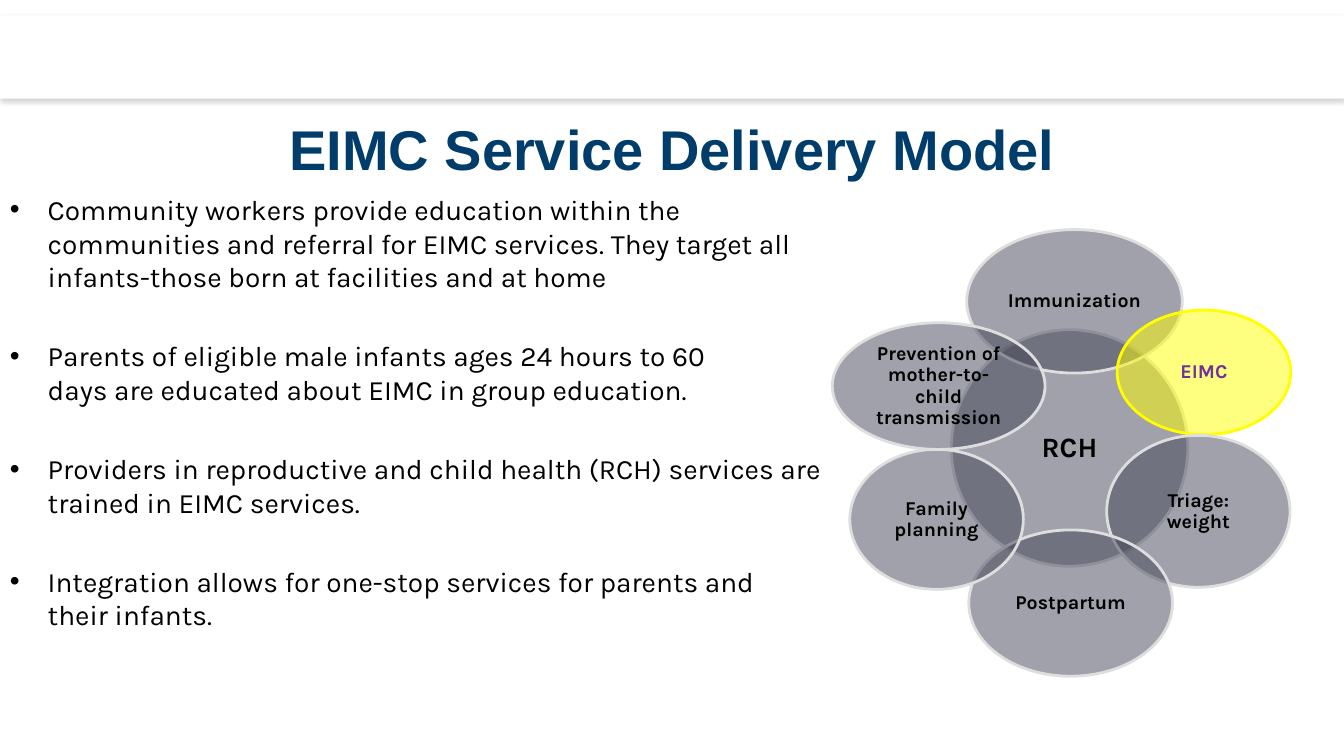
from lxml.etree import SubElement
from pptx import Presentation
from pptx.dml.color import RGBColor
from pptx.enum.shapes import MSO_SHAPE
from pptx.enum.text import MSO_ANCHOR, PP_ALIGN
from pptx.oxml.ns import qn
from pptx.util import Pt

TITLE = "EIMC Service Delivery Model"
BULLETS = [
    ["Community workers provide education within the communities and referral "
     "for EIMC services. They target all infants-those born at facilities and at home"],
    ["Parents of eligible male infants ages 24 hours to 60 ",
     "days are educated about EIMC in group education."],
    ["Providers in reproductive and child health (RCH) services are trained in EIMC services."],
    ["Integration allows for one-stop services for parents and their infants."],
]
GREY = ("424456", "DEDEDE", "000000")
YELLOW = ("FFFF00", "FFFF00", "7030A0")
SERVICES = [
    ("RCH", 679.5, 235.5, 169, 169, 20, GREY),
    ("Immunization", 690.5, 164, 154, 102.5, 14, GREY),
    ("EIMC", 798, 221.5, 124, 89, 14, YELLOW),
    ("Triage: weight", 790.5, 311, 131, 108.5, 14, GREY),
    ("Postpartum", 692, 378.5, 145.5, 104.5, 14, GREY),
    ("Family planning", 607, 321, 124, 100, 14, GREY),
    ("Prevention of mother-to-child transmission", 594.5, 230.5, 152, 90.5, 14, GREY),
]


def paint(color_format, value):
    color_format.rgb = RGBColor.from_string(value)


def add_run(p, text, font, size, color, bold=False):
    r = p.add_run()
    r.text = text
    r.font.name = font
    r.font.size = Pt(size)
    r.font.bold = bold
    paint(r.font.color, color)


def add_shape(kind, box, fill):
    s = slide.shapes.add_shape(kind, *map(Pt, box))
    s.shadow.inherit = False
    s.fill.solid()
    paint(s.fill.fore_color, fill)
    return s


def add_text_frame(box):
    tf = slide.shapes.add_textbox(*map(Pt, box)).text_frame
    tf.word_wrap = True
    return tf


def set_alpha(color, percent):
    SubElement(color, qn("a:alpha"), val=str(percent * 1000))


def add_bullet(p, indent):
    pPr = p._p.get_or_add_pPr()
    pPr.set("marL", str(Pt(indent)))
    pPr.set("indent", str(-Pt(indent)))
    SubElement(pPr, qn("a:buFont"), typeface="Arial")
    SubElement(pPr, qn("a:buChar"), char="•")


def add_banner():
    s = add_shape(MSO_SHAPE.RECTANGLE, (0, 11, 960, 59.5), "FFFFFF")
    s.line.fill.background()
    effects = s._element.spPr.find(qn("a:effectLst"))
    shadow = SubElement(effects, qn("a:outerShdw"), blurRad=str(Pt(3.1)),
                        dist=str(Pt(1.8)), dir="5400000", rotWithShape="0")
    set_alpha(SubElement(shadow, qn("a:srgbClr"), val="808080"), 35)


def add_title():
    tf = add_text_frame((48, 75, 864, 61))
    tf.vertical_anchor = MSO_ANCHOR.MIDDLE
    p = tf.paragraphs[0]
    p.alignment = PP_ALIGN.CENTER
    add_run(p, TITLE, "Arial", 40, "003D6B", True)


def add_bullets():
    tf = add_text_frame((0, 134, 594, 369))
    for i, lines in enumerate(BULLETS):
        p = tf.add_paragraph() if i else tf.paragraphs[0]
        add_bullet(p, 27)
        if i:
            p.space_before = Pt(32.5)
        for j, line in enumerate(lines):
            if j:
                p.add_line_break()
            add_run(p, line, "Karla", 20, "000000")


def add_service(name, left, top, width, height, size, colors):
    fill, outline, ink = colors
    s = add_shape(MSO_SHAPE.OVAL, (left, top, width, height), fill)
    set_alpha(s._element.spPr.find(qn("a:solidFill"))[0], 50)
    paint(s.line.color, outline)
    s.line.width = Pt(2)
    tf = s.text_frame
    tf.word_wrap = True
    tf.vertical_anchor = MSO_ANCHOR.MIDDLE
    tf.margin_left = tf.margin_right = tf.margin_top = tf.margin_bottom = Pt(1.5)
    p = tf.paragraphs[0]
    p.alignment = PP_ALIGN.CENTER
    p.line_spacing = 0.9
    add_run(p, name, "Karla", size, ink, True)


prs = Presentation()
prs.slide_width, prs.slide_height = Pt(960), Pt(540)
slide = prs.slides.add_slide(prs.slide_layouts[6])
add_banner()
add_title()
add_bullets()
for service in SERVICES:
    add_service(*service)
prs.save("out.pptx")
